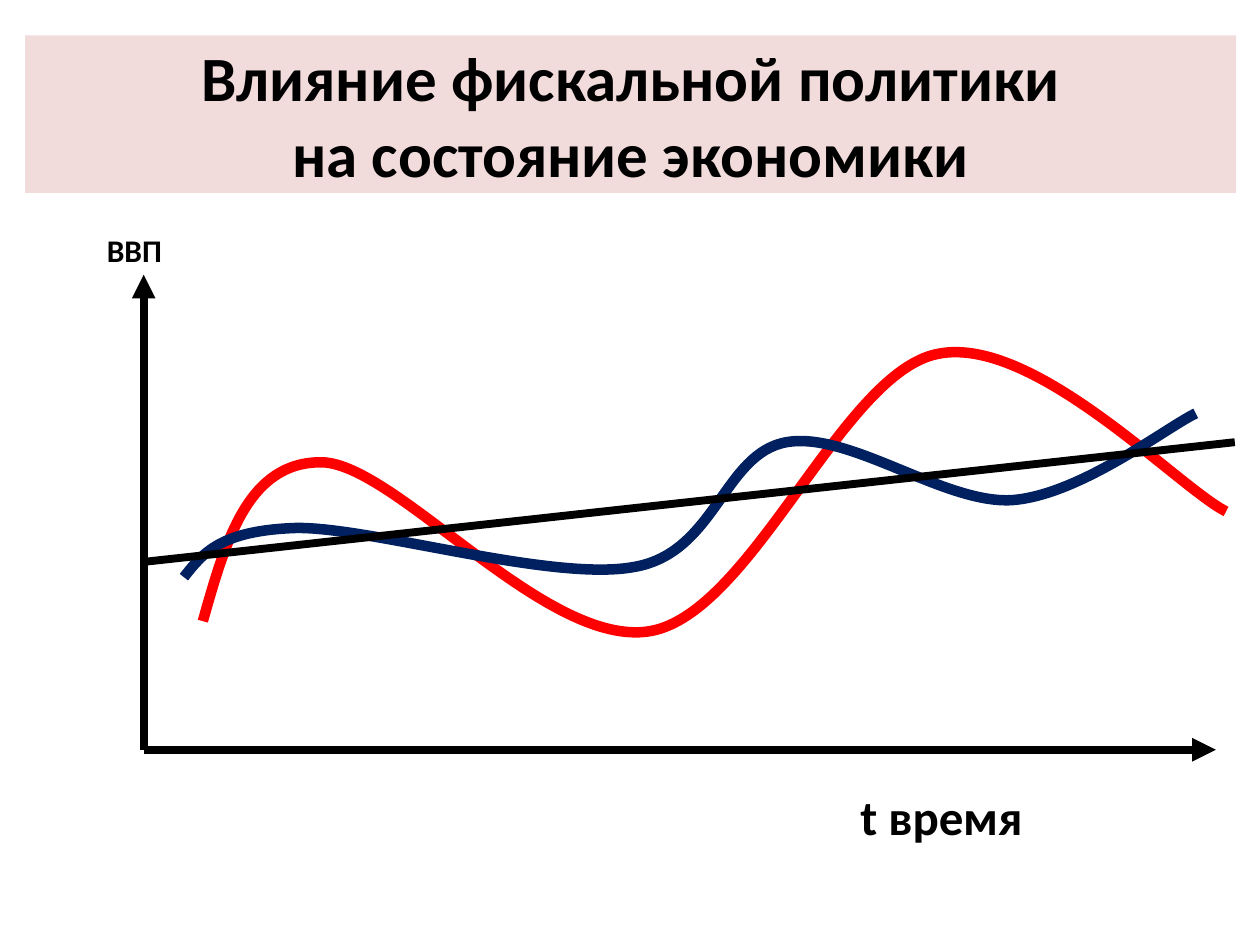
from lxml import etree
from pptx import Presentation
from pptx.dml.color import RGBColor
from pptx.enum.shapes import MSO_CONNECTOR
from pptx.enum.text import MSO_ANCHOR, MSO_AUTO_SIZE, PP_ALIGN
from pptx.oxml.ns import qn
from pptx.util import Pt

STRAIGHT = MSO_CONNECTOR.STRAIGHT
MIDDLE = MSO_ANCHOR.MIDDLE
FIT_SHAPE = MSO_AUTO_SIZE.SHAPE_TO_FIT_TEXT
NO_WRAP_CENTER = PP_ALIGN.CENTER

COLORS = {"ink": "000000", "banner": "F2DCDB", "red": "FF0000", "navy": "002060"}
FONT = "Calibri"
TITLE = "Влияние фискальной политики\vна состояние экономики"
TITLE_BOX = (14.4, 20.2, 692, 90)

# text, size, box
LABELS = [
    ("ВВП", 18, (54, 128.2, 64.8, 36)),
    ("t время", 28, (484.6, 445.7, 108, 41)),
]

ORIGIN = (82.1, 428.4)
GDP_AXIS_END = (82.1, 157)
TIME_AXIS_END = (694.8, 428.4)
TREND = ((82.1, 321.1), (705.6, 252.7))
AXIS_WIDTH, CURVE_WIDTH = 4.5, 6

# Start point, then two control points and an end point for each arc
CURVES = [
    ("red", [
        (115.9, 355),
        (128.9, 308.9), (141.8, 263.5), (184.3, 264.2),
        (226.8, 265.7), (312.5, 370.8), (371.5, 360.7),
        (429.8, 350.6), (481, 213.1), (535.7, 202.3),
        (590.4, 190.8), (673.2, 278.6), (700.6, 292.3),
    ]),
    ("navy", [
        (105.1, 329.8),
        (115.9, 316.1), (126, 303.1), (169.2, 301.7),
        (211.7, 301), (315.4, 332.6), (362.2, 324),
        (409, 316.1), (413.3, 259.2), (449.3, 252.7),
        (485.3, 246.2), (539.3, 288), (578.2, 285.8),
        (617, 283), (666.7, 244.1), (683.3, 236.2),
    ]),
]


def color(name):
    return RGBColor.from_string(COLORS[name])


def points(values):
    return [Pt(value) for value in values]


def format_text(frame, size):
    for paragraph in frame.paragraphs:
        for run in paragraph.runs:
            run.font.name = FONT
            run.font.size = Pt(size)
            run.font.bold = True
            run.font.color.rgb = color("ink")


def add_title(slide):
    title = slide.shapes.title
    title.left, title.top, title.width, title.height = points(TITLE_BOX)
    title.fill.solid()
    title.fill.fore_color.rgb = color("banner")
    frame = title.text_frame
    frame.text = TITLE
    frame.vertical_anchor = MIDDLE
    frame.paragraphs[0].alignment = NO_WRAP_CENTER
    format_text(frame, 36)


def add_label(slide, text, size, box):
    frame = slide.shapes.add_textbox(*points(box)).text_frame
    frame.text = text
    frame.word_wrap = False
    frame.auto_size = FIT_SHAPE
    format_text(frame, size)


def add_line(slide, start, end, arrow=False):
    line = slide.shapes.add_connector(STRAIGHT, *points(start + end))
    line.line.color.rgb = color("ink")
    line.line.width = Pt(AXIS_WIDTH)
    properties = line._element.spPr
    if arrow:
        outline = properties.find(qn("a:ln"))
        etree.SubElement(outline, qn("a:tailEnd"), type="triangle")
    etree.SubElement(properties, qn("a:effectLst"))


def add_curve(slide, color_name, vertices):
    """Lay out the vertices as a polyline, then turn each three into a Bezier arc."""
    start, *rest = [tuple(points(vertex)) for vertex in vertices]
    builder = slide.shapes.build_freeform(*start, scale=1.0)
    builder.add_line_segments(rest, close=False)
    curve = builder.convert_to_shape()
    curve.shadow.inherit = False
    curve.fill.background()
    curve.line.color.rgb = color(color_name)
    curve.line.width = Pt(CURVE_WIDTH)

    outline = next(curve._element.iter(qn("a:path")))
    segments = outline.findall(qn("a:lnTo"))
    for first in range(0, len(segments), 3):
        arc = etree.SubElement(outline, qn("a:cubicBezTo"))
        for segment in segments[first:first + 3]:
            arc.append(segment[0])
            outline.remove(segment)


def main():
    deck = Presentation()
    deck.slide_width, deck.slide_height = Pt(720), Pt(540)
    slide = deck.slides.add_slide(deck.slide_layouts[5])
    add_title(slide)
    add_line(slide, ORIGIN, GDP_AXIS_END, arrow=True)
    for label in LABELS:
        add_label(slide, *label)
    for curve in CURVES:
        add_curve(slide, *curve)
    add_line(slide, *TREND)
    add_line(slide, ORIGIN, TIME_AXIS_END, arrow=True)
    deck.save("out.pptx")


if __name__ == "__main__":
    main()
